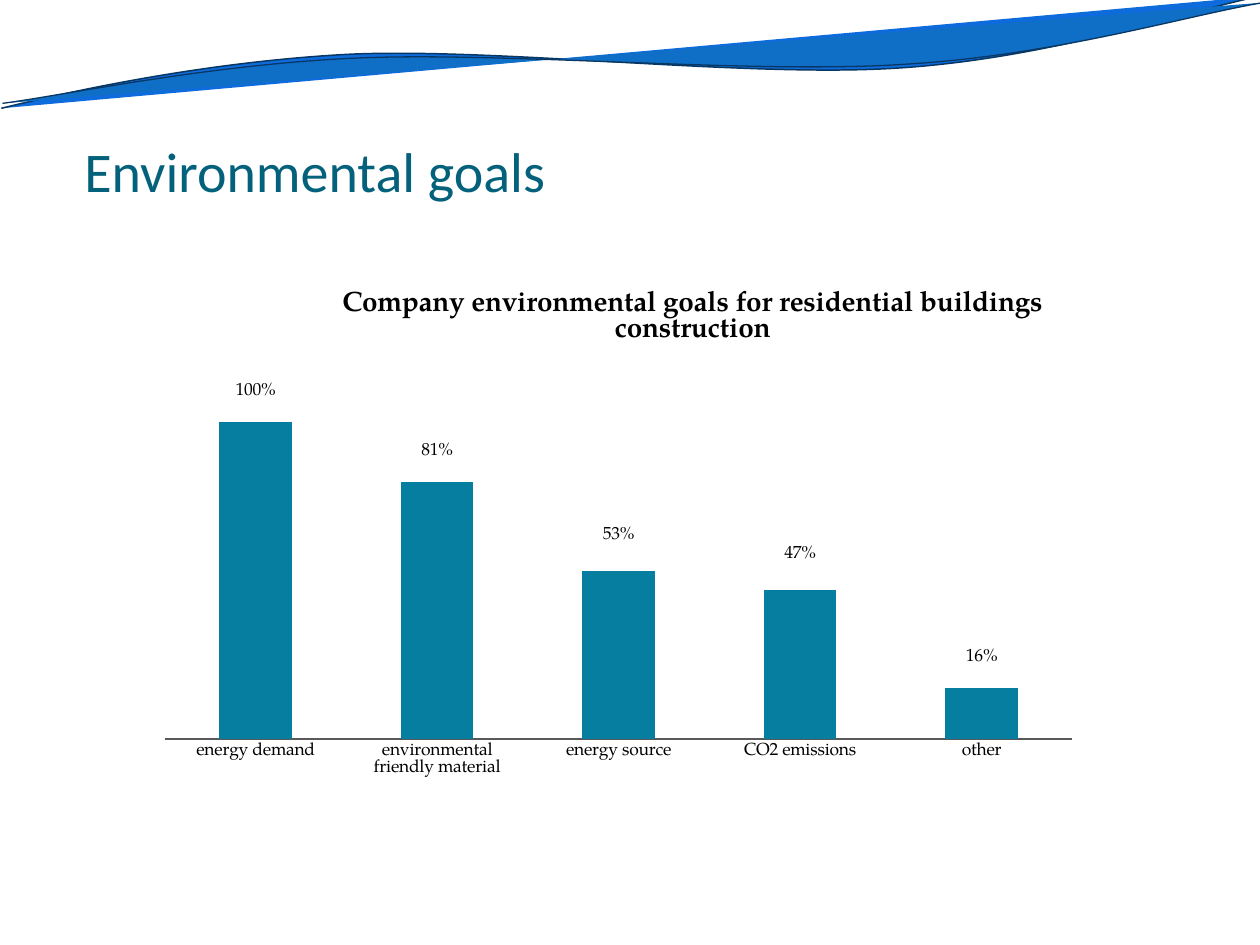
"""Build the environmental goals slide with its wave banner and column chart."""
from math import cos, radians, sin

from lxml.etree import SubElement
from pptx import Presentation
from pptx.chart.data import CategoryChartData
from pptx.dml.color import RGBColor
from pptx.enum.chart import XL_CHART_TYPE as ChartType
from pptx.enum.chart import XL_LABEL_POSITION as LabelPosition
from pptx.enum.chart import XL_TICK_LABEL_POSITION as TickLabels
from pptx.enum.chart import XL_TICK_MARK as TickMark
from pptx.enum.text import MSO_ANCHOR as Anchor
from pptx.oxml.ns import qn
from pptx.util import Inches, Pt

TITLE_COLOR = RGBColor(0x04, 0x61, 0x7B)
BAR_COLOR = RGBColor(0x05, 0x7E, 0xA0)
WAVE_LINE = RGBColor(0x08, 0x37, 0x63)
BACK_WAVE = RGBColor(0x0E, 0x6B, 0xDC)
FRONT_WAVE = RGBColor(0x0F, 0x6F, 0xC6)
AXIS_COLOR = RGBColor(0x59, 0x59, 0x59)
BLACK = RGBColor(0, 0, 0)
CHART_FONT = "TeX Gyre Pagella"
TILT = 2.7


def set_format(target, values):
    for name, value in values.items():
        setattr(target, name, value)


def set_layout(parent, index, **values):
    for old in parent.findall(qn("c:layout")):
        parent.remove(old)
    layout = SubElement(parent, qn("c:layout"))
    manual = SubElement(layout, qn("c:manualLayout"))
    for name, value in values.items():
        SubElement(manual, qn(f"c:{name}")).set("val", str(value))
    parent.insert(index, layout)


deck = Presentation()
set_format(deck, {"slide_width": Inches(10), "slide_height": Inches(7.5)})
page = deck.slides.add_slide(deck.slide_layouts[6])

waves = [
    (BACK_WAVE, 0.85, (5.01, 0.44),
     [(0.01, 0.86), (0.5, 0.74), (1.6, 0.49), (2.79, 0.43), (3.98, 0.38),
      (5.94, 0.62), (7.14, 0.54), (8.35, 0.46), (9.41, 0.09), (10, -0.03)]),
    (FRONT_WAVE, 0.75, (5.02, 0.44),
     [(0.02, 0.82), (0.49, 0.76), (1.66, 0.51), (2.85, 0.46), (4.05, 0.41),
      (5.99, 0.59), (7.18, 0.51), (8.38, 0.44), (9.43, 0.12), (10.03, 0.02)]),
]
cosine, sine = cos(radians(TILT)), sin(radians(TILT))
for color, weight, (middle_x, middle_y), knots in waves:
    level = [(Inches(middle_x + (x - middle_x) * cosine - (y - middle_y) * sine),
              Inches(middle_y + (x - middle_x) * sine + (y - middle_y) * cosine))
             for x, y in knots]
    builder = page.shapes.build_freeform(*level[0])
    builder.add_line_segments(level[1:], close=False)
    wave = builder.convert_to_shape()
    lines = list(wave._element.iter(qn("a:lnTo")))
    for start in range(0, len(lines), 3):
        curve = SubElement(lines[start].getparent(), qn("a:cubicBezTo"))
        for line in lines[start:start + 3]:
            curve.append(line[0])
            line.getparent().remove(line)
    wave.rotation = 360 - TILT
    wave.shadow.inherit = False
    wave.fill.solid()
    wave.fill.fore_color.rgb = color
    wave.line.color.rgb = WAVE_LINE
    wave.line.width = Pt(weight)

goals = {"energy demand": 1, "environmental friendly material": 0.81, "energy source": 0.53,
         "CO2 emissions": 0.47, "other": 0.16}
label_shifts = [-0.03, -0.03, -0.04, -0.04, -0.03]
heading = "Company environmental goals for residential buildings construction"
data = CategoryChartData(number_format="0%")
data.categories = list(goals)
data.add_series(heading, list(goals.values()))
frame = page.shapes.add_chart(ChartType.COLUMN_CLUSTERED, Inches(1.3), Inches(2.25),
                              Inches(7.22), Inches(4.23), data)
chart = frame.chart
chart.has_legend = False
label_font = {"name": CHART_FONT, "size": Pt(10)}
set_format(chart.font, label_font)
chart.font.color.rgb = BLACK

chart.has_title = True
chart.chart_title.include_in_layout = False
para = chart.chart_title.text_frame.paragraphs[0]
span = para.add_run()
span.text = heading
set_format(span.font, {"name": CHART_FONT, "size": Pt(16), "bold": True})
span.font.color.rgb = BLACK
set_layout(chart.chart_title._element, 1, xMode="edge", yMode="edge", x=0.19, y=0)

set_format(chart.value_axis, {"minimum_scale": 0, "maximum_scale": 1.2, "visible": False,
                              "has_major_gridlines": False})
set_format(chart.category_axis, {"major_tick_mark": TickMark.NONE, "minor_tick_mark": TickMark.NONE,
                                 "tick_label_position": TickLabels.NEXT_TO_AXIS})
set_format(chart.category_axis.tick_labels.font, label_font)
chart.category_axis.tick_labels.offset = 0
chart.category_axis.format.line.color.rgb = AXIS_COLOR
chart.category_axis.format.line.width = Pt(1.25)

plot = chart.plots[0]
set_format(plot, {"gap_width": 150, "vary_by_categories": False})
series = plot.series[0]
series.format.fill.solid()
series.format.fill.fore_color.rgb = BAR_COLOR
set_format(series.data_labels, {"show_value": True, "number_format": "0%",
                                "number_format_is_linked": False,
                                "position": LabelPosition.OUTSIDE_END})
for index in range(len(goals)):
    label = series.points[index].data_label
    set_format(label.font, label_font)
    label.position = LabelPosition.OUTSIDE_END
for label, shift in zip(chart._chartSpace.iter(qn("c:dLbl")), label_shifts):
    set_layout(label, 1, x=0, y=shift)
    number = SubElement(label, qn("c:numFmt"))
    number.set("formatCode", "0%")
    number.set("sourceLinked", "0")
    label.insert(2, number)
for leader in chart._chartSpace.iter(qn("c:showLeaderLines")):
    leader.set("val", "0")
set_layout(chart._chartSpace.find(".//" + qn("c:plotArea")), 0, layoutTarget="inner",
           xMode="edge", yMode="edge", x=0, y=0.14, w=1, h=5 / 7)

box = page.shapes.add_textbox(Inches(0.67), Inches(0.6), Inches(8.43), Inches(1.02))
set_format(box.text_frame, {"word_wrap": True, "vertical_anchor": Anchor.BOTTOM, "margin_left": 0,
                            "margin_top": Inches(0.05), "margin_right": 0, "margin_bottom": 0})
span = box.text_frame.paragraphs[0].add_run()
span.text = "Environmental goals"
set_format(span.font, {"name": "Calibri", "size": Pt(32)})
span.font.color.rgb = TITLE_COLOR

deck.save("out.pptx")
